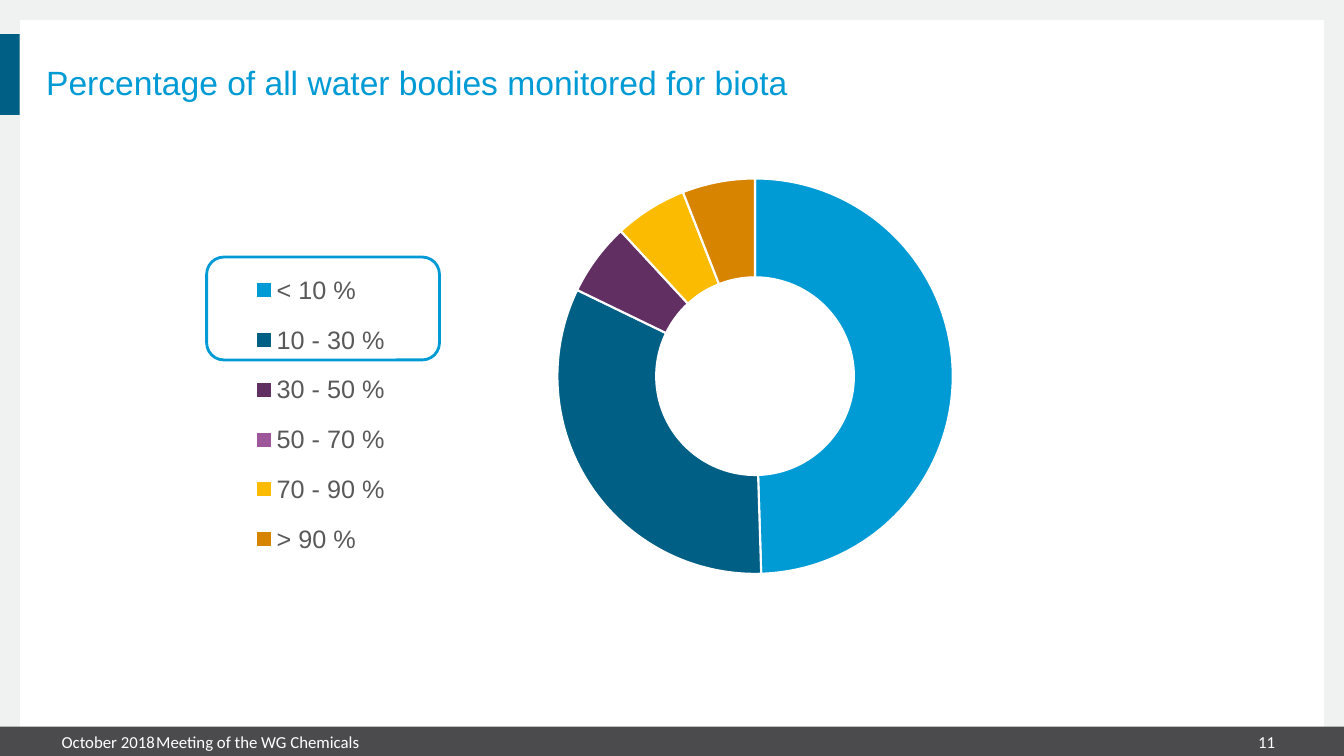
from lxml import etree
from pptx import Presentation
from pptx import util as u
from pptx.chart.data import CategoryChartData
from pptx.dml.color import RGBColor
from pptx.enum import chart as ch, shapes, text
from pptx.oxml.ns import qn

Pt = u.Pt
BLUE, NAVY, WHITE = "009BD5", "005F85", "FFFFFF"
FOOTER_TOP, FOOTER_H = 519, 21

# Share of answers per range, with the colour of each slice
SLICES = [
    ("< 10 %", 50, BLUE),
    ("10 - 30 %", 33, NAVY),
    ("30 - 50 %", 6, "622F63"),
    ("50 - 70 %", None, "9D579A"),
    ("70 - 90 %", 6, "FABB00"),
    ("> 90 %", 6, "D78400"),
]


def rgb(color):
    return RGBColor.from_string(color)


def style_font(font, name, size, color):
    font.name, font.size = name, Pt(size)
    font.color.rgb = rgb(color)


def add_box(s, kind, x, y, w, h, fill=None, line=None):
    sp = s.shapes.add_shape(kind, Pt(x), Pt(y), Pt(w), Pt(h))
    sp.shadow.inherit = False
    if fill:
        sp.fill.solid()
        sp.fill.fore_color.rgb = rgb(fill)
    else:
        sp.fill.background()
    if line:
        sp.line.color.rgb = rgb(line)
        sp.line.width = Pt(2)
    else:
        sp.line.fill.background()
    return sp


def add_text(s, words, x, y, w, h, font, size, color,
             anchor=text.MSO_ANCHOR.MIDDLE, align=text.PP_ALIGN.LEFT):
    tf = s.shapes.add_textbox(Pt(x), Pt(y), Pt(w), Pt(h)).text_frame
    tf.word_wrap = True
    tf.margin_left = tf.margin_right = tf.margin_top = tf.margin_bottom = 0
    tf.vertical_anchor = anchor
    p = tf.paragraphs[0]
    p.text = words
    p.alignment = align
    style_font(p.font, font, size, color)
    return p


def set_layout(parent, index, x, y, w, h, inner=False):
    """Place a chart part by fractions of the chart area."""
    for old in parent.findall(qn("c:layout")):
        parent.remove(old)
    layout = etree.Element(qn("c:layout"))
    manual = etree.SubElement(layout, qn("c:manualLayout"))
    items = [("layoutTarget", "inner")] if inner else []
    items += [("xMode", "edge"), ("yMode", "edge"),
              ("x", x), ("y", y), ("w", w), ("h", h)]
    for tag, val in items:
        etree.SubElement(manual, qn("c:" + tag)).set("val", str(val))
    parent.insert(index, layout)


def add_doughnut(s, x, y, w, h):
    data = CategoryChartData()
    data.categories = [name for name, _, _ in SLICES]
    data.add_series("Series 1", [val for _, val, _ in SLICES])
    chart = s.shapes.add_chart(ch.XL_CHART_TYPE.DOUGHNUT,
                               Pt(x), Pt(y), Pt(w), Pt(h), data).chart
    chart.has_title = False
    style_font(chart.font, "Cambria", 10, "000000")

    plot = chart.plots[0]
    plot.vary_by_categories = True
    plot.has_data_labels = False
    for i, (_, _, color) in enumerate(SLICES):
        fmt = plot.series[0].points[i].format
        fmt.fill.solid()
        fmt.fill.fore_color.rgb = rgb(color)
        fmt.line.color.rgb = rgb(WHITE)
        fmt.line.width = Pt(1.5)

    chart.has_legend = True
    legend = chart.legend
    legend.position = ch.XL_LEGEND_POSITION.BOTTOM
    legend.include_in_layout = False
    style_font(legend.font, "Arial", 18, "595959")

    # Legend rows line up with the highlight frame
    plot_area = chart._chartSpace.chart.plotArea
    set_layout(plot_area, 0, 0.346, 0.136, 0.509, 0.783, inner=True)
    set_layout(legend._element, 1, 0.1, 0.287, 0.16, 0.634)


def main():
    prs = Presentation()
    prs.slide_width, prs.slide_height = Pt(960), Pt(540)
    s = prs.slides.add_slide(prs.slide_layouts[6])
    rect = shapes.MSO_SHAPE.RECTANGLE

    # Frame, page, footer bar and title tab
    add_box(s, rect, 0, 0, 960, 540, "F0F1F1")
    add_box(s, rect, 14.4, 14.4, 931.5, 517, WHITE)
    add_box(s, rect, 0, FOOTER_TOP, 960, FOOTER_H, "4B4B4D")
    add_box(s, rect, 0, 24.5, 14, 57.6, NAVY)

    # Chart
    add_doughnut(s, 95.8, 78.5, 738.7, 360.7)

    # Title
    title = add_text(s, "Percentage of all water bodies monitored for biota",
                     33, 25.2, 864, 47.5, "Arial", 24, BLUE,
                     anchor=text.MSO_ANCHOR.BOTTOM)
    title.line_spacing = Pt(22)

    # Footer: date, meeting, page number
    for words, x, w, align in [
        ("October 2018", 44, 67.6, text.PP_ALIGN.LEFT),
        ("Meeting of the WG Chemicals", 111.6, 705.6, text.PP_ALIGN.LEFT),
        ("11", 852.5, 58.3, text.PP_ALIGN.RIGHT),
    ]:
        add_text(s, words, x, FOOTER_TOP, w, FOOTER_H, "Calibri", 12, WHITE,
                 align=align)

    # Frame around the two lowest ranges
    add_box(s, shapes.MSO_SHAPE.ROUNDED_RECTANGLE, 147.6, 183.6, 166.3, 73.5,
            line=BLUE)

    prs.save("out.pptx")


if __name__ == "__main__":
    main()
